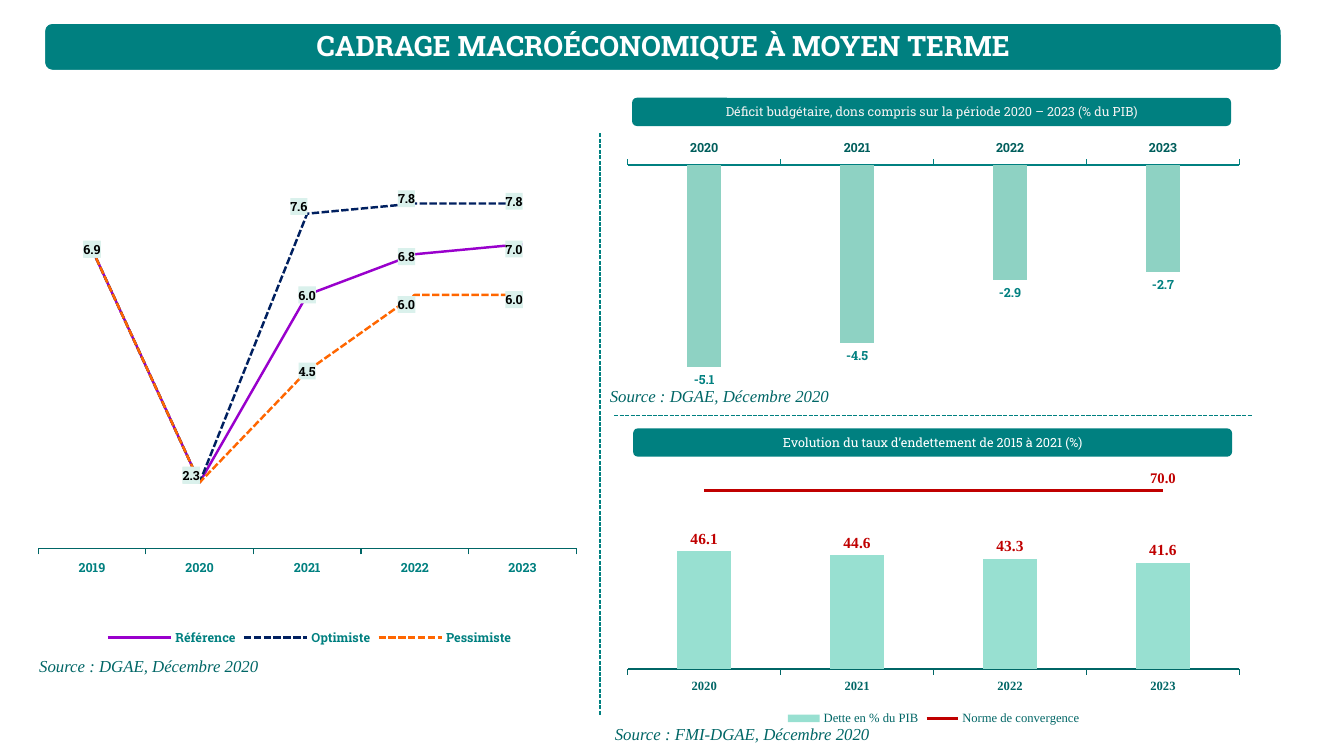
from dataclasses import dataclass
from pptx import Presentation
from pptx.chart.data import CategoryChartData
from pptx.dml.color import RGBColor
from pptx.enum.chart import XL_CHART_TYPE as ChartType, XL_LABEL_POSITION as LabelPos
from pptx.enum.chart import XL_LEGEND_POSITION as LegendPos, XL_MARKER_STYLE as Marker
from pptx.enum.chart import XL_TICK_LABEL_POSITION as TickLabel, XL_TICK_MARK as Tick
from pptx.enum.dml import MSO_LINE
from pptx.enum.shapes import MSO_CONNECTOR, MSO_SHAPE
from pptx.enum.text import MSO_ANCHOR, PP_ALIGN
from pptx.oxml import parse_xml
from pptx.oxml.ns import nsdecls, qn
from pptx.util import Inches, Pt


@dataclass(frozen=True)
class Theme:
    """Colours, fonts and type sizes of the slide."""
    teal: str = "008080"
    deep: str = "006666"
    axis: str = "005E5C"
    white: str = "FFFFFF"
    pale: str = "F2F2F2"
    black: str = "000000"
    tag: str = "DAF1EC"
    deficit: str = "8ED2C3"
    debt: str = "98E0D1"
    red: str = "C00000"
    slab: str = "Roboto Slab"
    serif: str = "Times New Roman"
    title: float = 20
    source: float = 12
    small: float = 9
    debt_label: float = 11
    norm_label: float = 10.5


T = Theme()
TITLE = "CADRAGE MACROÉCONOMIQUE À MOYEN TERME"
HEADINGS = [
    ("Déficit budgétaire, dons compris sur la période 2020 – 2023 (% du PIB)", 6.27, 0.97, T.pale),
    ("Evolution du taux d’endettement de 2015 à 2021 (%)", 6.28, 4.25, T.white),
]
SOURCES = [
    ("Source\u00a0: DGAE, Décembre 2020", 0.29, 6.46, 2.55),
    ("Source\u00a0: DGAE, Décembre 2020", 5.95, 3.78, 2.55),
    ("Source\u00a0: FMI-DGAE, Décembre 2020", 6, 7.13, 3.11),
]
DIVIDERS = [(5.95, 1.32, 5.95, 7.09), (6.09, 4.12, 12.42, 4.12)]
YEARS = ["2019", "2020", "2021", "2022", "2023"]
GROWTH = [("Référence", (6.9, 2.3, 6, 6.8, 7)),
          ("Optimiste", (6.9, 2.3, 7.6, 7.8, 7.8)),
          ("Pessimiste", (6.9, 2.3, 4.5, 6, 6))]
GROWTH_LINES = [("9900CC", MSO_LINE.SOLID), ("002060", MSO_LINE.SQUARE_DOT),
                ("FF6600", MSO_LINE.SQUARE_DOT)]
LABEL_SHIFT = -0.015
LABEL_RISES = [{1: -0.015, 3: 0.005, 4: 0.01},
               {1: -0.015, 2: -0.015, 3: -0.01, 4: -0.005},
               {1: -0.015, 3: 0.02, 4: 0.01}]
DEFICIT = [("Series 1", (-5.1, -4.5, -2.9, -2.7))]
DEBT = [("Dette en % du PIB", (46.1, 44.6, 43.3, 41.6)),
        ("Norme de convergence", (70, 70, 70, 70))]


def rgb(color):
    """Turn a hex code into a colour."""
    return RGBColor.from_string(color)


def set_font(font, name, size, color, bold=False, italic=False):
    """Apply the type settings to a font."""
    font.name, font.size, font.bold, font.italic = name, Pt(size), bold, italic
    font.color.rgb = rgb(color)


def fill(target, color):
    """Give a solid fill."""
    target.fill.solid()
    target.fill.fore_color.rgb = rgb(color)


def stroke(line, color, width, dash=MSO_LINE.SOLID):
    """Give a line its colour, width and dash."""
    line.color.rgb, line.width, line.dash_style = rgb(color), Pt(width), dash


def layout_xml(x, y, w=None, h=None):
    """Build a manual layout, an offset unless a size is given."""
    parts = [("x", x), ("y", y)]
    modes = ""
    if w is not None:
        parts += [("w", w), ("h", h)]
        modes = ('<c:layoutTarget val="inner"/><c:xMode val="edge"/>'
                 '<c:yMode val="edge"/>')
    values = "".join(f'<c:{tag} val="{value}"/>' for tag, value in parts)
    return parse_xml(f'<c:layout {nsdecls("c")}><c:manualLayout>{modes}{values}'
                     '</c:manualLayout></c:layout>')


def add_graph(slide, kind, box, years, series, plot, font, limits, axis_color, axis_line):
    """Add a chart with a hidden value axis and a placed plot area."""
    data = CategoryChartData(number_format="0.0")
    data.categories = years
    for name, values in series:
        data.add_series(name, values)
    chart = slide.shapes.add_chart(kind, *map(Inches, box), data).chart
    chart.has_title = chart.has_legend = False
    set_font(chart.font, font, T.small, axis_color)
    value_axis, years_axis = chart.value_axis, chart.category_axis
    value_axis.visible = value_axis.has_major_gridlines = False
    value_axis.minimum_scale, value_axis.maximum_scale = limits
    years_axis.major_tick_mark = Tick.OUTSIDE
    set_font(years_axis.tick_labels.font, font, T.small, axis_color, True)
    stroke(years_axis.format.line, *axis_line)
    chart.plots[0].vary_by_categories = False
    area = chart.plots[0]._element.getparent()
    for old in area.findall(qn("c:layout")):
        area.remove(old)
    area.insert(0, layout_xml(*plot))
    return chart


def add_legend(chart, font, color, bold):
    """Put the legend under the plot."""
    chart.has_legend = True
    chart.legend.position, chart.legend.include_in_layout = LegendPos.BOTTOM, False
    set_font(chart.legend.font, font, T.small, color, bold)


def show_values(series, position, *font):
    """Show the values of a series."""
    labels = series.data_labels
    labels.show_value, labels.position = True, position
    labels.number_format, labels.number_format_is_linked = "0.0", False
    set_font(labels.font, *font)


def style_line(series, color, dash=MSO_LINE.SOLID):
    """Draw a series as a straight line with no markers."""
    series.smooth, series.marker.style = False, Marker.NONE
    stroke(series.format.line, color, 1.75, dash)


def add_growth(slide):
    """Add the growth scenarios."""
    chart = add_graph(slide, ChartType.LINE, (0.29, 1.65, 5.56, 4.8), YEARS, GROWTH,
                      (0.016, 0.056, 0.96, 0.734), T.slab, (1, 8), T.teal, (T.deep, 0.75))
    add_legend(chart, T.slab, T.teal, True)
    for series, (color, dash), rises in zip(chart.plots[0].series, GROWTH_LINES, LABEL_RISES):
        style_line(series, color, dash)
        font = (T.slab, T.small, T.black, True)
        show_values(series, LabelPos.CENTER, *font)
        for index, rise in rises.items():
            label = series.points[index].data_label
            label.position = LabelPos.CENTER
            set_font(label.font, *font)
        for label in series._element.iter(qn("c:dLbl")):
            label[0].addnext(layout_xml(LABEL_SHIFT, rises[int(label[0].get("val"))]))
        for text in list(series._element.iter(qn("c:txPr"))):
            text.addprevious(parse_xml(
                f'<c:spPr {nsdecls("c", "a")}><a:solidFill><a:srgbClr val="{T.tag}"/>'
                '</a:solidFill></c:spPr>'))


def add_deficit(slide):
    """Add the budget deficit columns."""
    chart = add_graph(slide, ChartType.COLUMN_CLUSTERED, (6.1, 1.32, 6.32, 2.74), YEARS[1:],
                      DEFICIT, (0.02, 0.116, 0.96, 0.86), T.slab, (-6, 0), T.axis, (T.teal, 1))
    chart.category_axis.major_tick_mark = Tick.INSIDE
    chart.category_axis.tick_label_position = TickLabel.HIGH
    columns = chart.plots[0]
    columns.gap_width, columns.overlap = 350, -27
    deficit = columns.series[0]
    deficit.invert_if_negative = False
    fill(deficit.format, T.deficit)
    show_values(deficit, LabelPos.OUTSIDE_END, T.slab, T.small, T.teal, True)


def add_debt(slide):
    """Add the debt columns with the convergence line."""
    chart = add_graph(slide, ChartType.COLUMN_CLUSTERED, (6.1, 4.56, 6.32, 2.68), YEARS[1:],
                      DEBT, (0.02, 0.02, 0.96, 0.755), T.serif, (0, 80), T.deep, (T.deep, 1))
    add_legend(chart, T.serif, T.deep, False)
    columns = chart.plots[0]
    columns.gap_width = 185
    bars = columns._element
    norm_ser = columns.series[1]._element
    for flag in norm_ser.findall(qn("c:invertIfNegative")):
        norm_ser.remove(flag)
    lines = parse_xml(f'<c:lineChart {nsdecls("c")}><c:grouping val="standard"/>'
                      '<c:varyColors val="0"/><c:marker val="1"/></c:lineChart>')
    lines.insert(2, norm_ser)
    for axis in bars.findall(qn("c:axId")):
        lines.append(parse_xml(f'<c:axId {nsdecls("c")} val="{axis.get("val")}"/>'))
    bars.addnext(lines)
    debt, norm = columns.series[0], chart.plots[1].series[0]
    fill(debt.format, T.debt)
    show_values(debt, LabelPos.OUTSIDE_END, T.serif, T.debt_label, T.red, True)
    style_line(norm, T.red)
    norm.data_labels.show_value = False
    last = norm.points[len(DEBT[1][1]) - 1].data_label
    last.position = LabelPos.ABOVE
    set_font(last.font, T.serif, T.norm_label, T.red, True)


def add_bar(slide, *box):
    """Add a teal rounded bar."""
    bar = slide.shapes.add_shape(MSO_SHAPE.ROUNDED_RECTANGLE, *map(Inches, box))
    bar.shadow.inherit = False
    fill(bar, T.teal)
    bar.line.fill.background()
    return bar


def add_title(slide):
    """Set the title on its banner."""
    title = slide.shapes.title
    title.left, title.top, title.width, title.height = map(Inches, (0.49, 0.29, 12.18, 0.36))
    title.text_frame.text = TITLE
    title.text_frame.vertical_anchor = MSO_ANCHOR.MIDDLE
    line = title.text_frame.paragraphs[0]
    line.alignment, line.line_spacing = PP_ALIGN.CENTER, 0.9
    set_font(line.font, T.slab, T.title, T.white, True)
    banner = add_bar(slide, 0.44, 0.23, 12.27, 0.47)
    stroke(banner.line, T.white, 1)
    title._element.addprevious(banner._element)


def main():
    """Build the slide."""
    deck = Presentation()
    deck.slide_width, deck.slide_height = Inches(13.33), Inches(7.5)
    slide = deck.slides.add_slide(deck.slide_layouts[5])
    add_title(slide)
    add_growth(slide)
    for ends in DIVIDERS:
        divider = slide.shapes.add_connector(MSO_CONNECTOR.STRAIGHT, *map(Inches, ends))
        stroke(divider.line, T.teal, 1, MSO_LINE.SQUARE_DOT)
        divider._element.spPr.append(parse_xml(f'<a:effectLst {nsdecls("a")}/>'))
    add_deficit(slide)
    add_debt(slide)
    for text, left, top, color in HEADINGS:
        heading = add_bar(slide, left, top, 5.94, 0.28)
        heading.text_frame.text = text
        line = heading.text_frame.paragraphs[0]
        line.alignment = PP_ALIGN.CENTER
        set_font(line.font, T.slab, T.small, color)
    for text, left, top, width in SOURCES:
        source = slide.shapes.add_textbox(*map(Inches, (left, top, width, 0.3))).text_frame
        source.word_wrap, source.text = True, text
        set_font(source.paragraphs[0].font, T.serif, T.source, T.deep, italic=True)
    deck.save("out.pptx")


if __name__ == "__main__":
    main()
